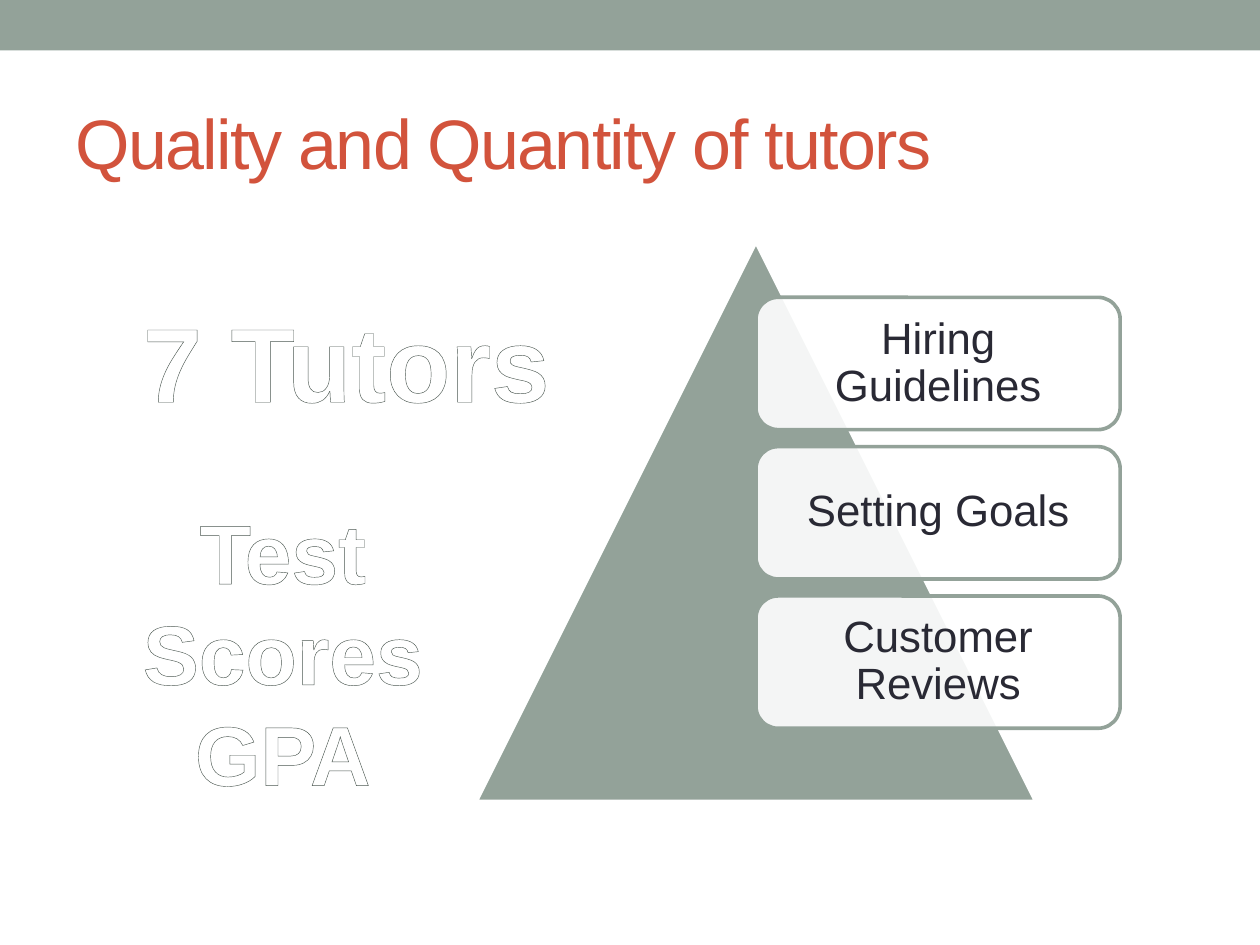
import pptx
import pptx.util
import pptx.dml.color
import pptx.enum.shapes
import pptx.enum.text
import pptx.oxml
import pptx.oxml.ns
from pptx.util import Inches

COLORS = {
    "sage": "93A299",
    "dark_sage": "4A5750",
    "rust": "D2533C",
    "ink": "292934",
    "white": "FFFFFF",
}
SHAPES = pptx.enum.shapes.MSO_SHAPE
ALIGN = pptx.enum.text.PP_ALIGN
ANCHOR = pptx.enum.text.MSO_ANCHOR


def color(name):
    return pptx.dml.color.RGBColor.from_string(COLORS[name])


def style_paragraph(para, size, color_name, align, bold=False):
    para.alignment = align
    para.font.name = "Arial"
    para.font.size = pptx.util.Pt(size)
    para.font.bold = bold
    para.font.color.rgb = color(color_name)
    return para._p.pPr.find(pptx.oxml.ns.qn("a:defRPr"))


def add_title(page, text):
    title = page.shapes.title
    title.left, title.top = Inches(0.5), Inches(0.58)
    title.width, title.height = Inches(9), Inches(1.08)
    title.text_frame.text = text
    title.text_frame.vertical_anchor = ANCHOR.MIDDLE
    para = title.text_frame.paragraphs[0]
    properties = style_paragraph(para, 40, "rust", ALIGN.LEFT)
    properties.set("spc", "-100")


def add_block(page, kind, left, top, width, height, fill, line=None):
    block = page.shapes.add_shape(
        kind, Inches(left), Inches(top), Inches(width), Inches(height))
    block.shadow.inherit = False
    block.fill.solid()
    block.fill.fore_color.rgb = color(fill)
    if line:
        block.line.color.rgb = color(line)
        block.line.width = pptx.util.Pt(2.08)
    else:
        block.line.fill.background()
    return block


def add_card(page, top, text):
    card = add_block(page, SHAPES.ROUNDED_RECTANGLE, 6, top, 2.89, 1.05,
                     "white", "sage")
    fill_color = card.fill._xPr.find(".//" + pptx.oxml.ns.qn("a:srgbClr"))
    fill_color.append(pptx.oxml.parse_xml(
        f'<a:alpha {pptx.oxml.ns.nsdecls("a")} val="90000"/>'))
    frame = card.text_frame
    frame.word_wrap = True
    frame.vertical_anchor = ANCHOR.MIDDLE
    frame.margin_left = frame.margin_right = Inches(0.15)
    frame.margin_top = frame.margin_bottom = Inches(0.15)
    frame.text = text
    para = frame.paragraphs[0]
    para.line_spacing = 0.9
    style_paragraph(para, 25, "ink", ALIGN.CENTER)


def add_outlined_text(page, left, top, width, height, text, size):
    box = page.shapes.add_textbox(
        Inches(left), Inches(top), Inches(width), Inches(height))
    box.text_frame.word_wrap = True
    box.text_frame.text = text
    for para in box.text_frame.paragraphs:
        properties = style_paragraph(para, size, "white", ALIGN.CENTER, True)
        properties.insert(0, pptx.oxml.parse_xml(
            f'<a:ln {pptx.oxml.ns.nsdecls("a")} w="31500"><a:solidFill>'
            f'<a:srgbClr val="{COLORS["dark_sage"]}"/></a:solidFill></a:ln>'))


def main():
    deck = pptx.Presentation()
    deck.slide_width, deck.slide_height = Inches(10), Inches(7.5)
    page = deck.slides.add_slide(deck.slide_layouts[5])
    add_block(page, SHAPES.RECTANGLE, 0, 0, 10, 0.4, "sage")
    add_title(page, "Quality and Quantity of tutors")
    add_block(page, SHAPES.ISOSCELES_TRIANGLE, 3.78, 1.92, 4.44, 4.44,
              "sage", "white")
    topics = ["Hiring Guidelines", "Setting Goals", "Customer Reviews"]
    for index, topic in enumerate(topics):
        add_card(page, 2.36 + index * 1.185, topic)
    add_outlined_text(page, 0.67, 3.92, 3.15, 1.72, "Test Scores\nGPA", 48)
    add_outlined_text(page, 1.02, 2.31, 3.46, 1.11, "7 Tutors", 60)
    deck.save("out.pptx")


if __name__ == "__main__":
    main()
